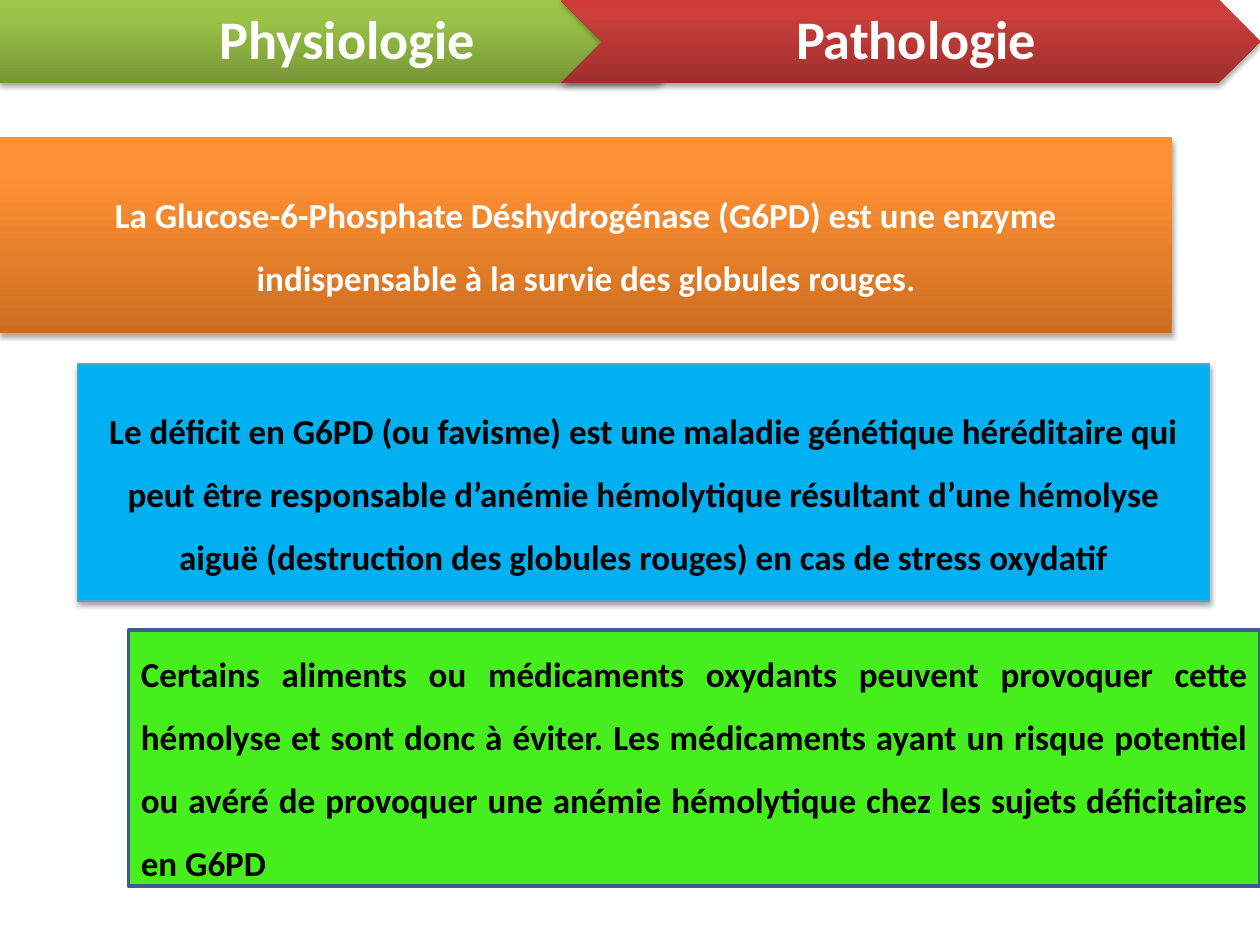
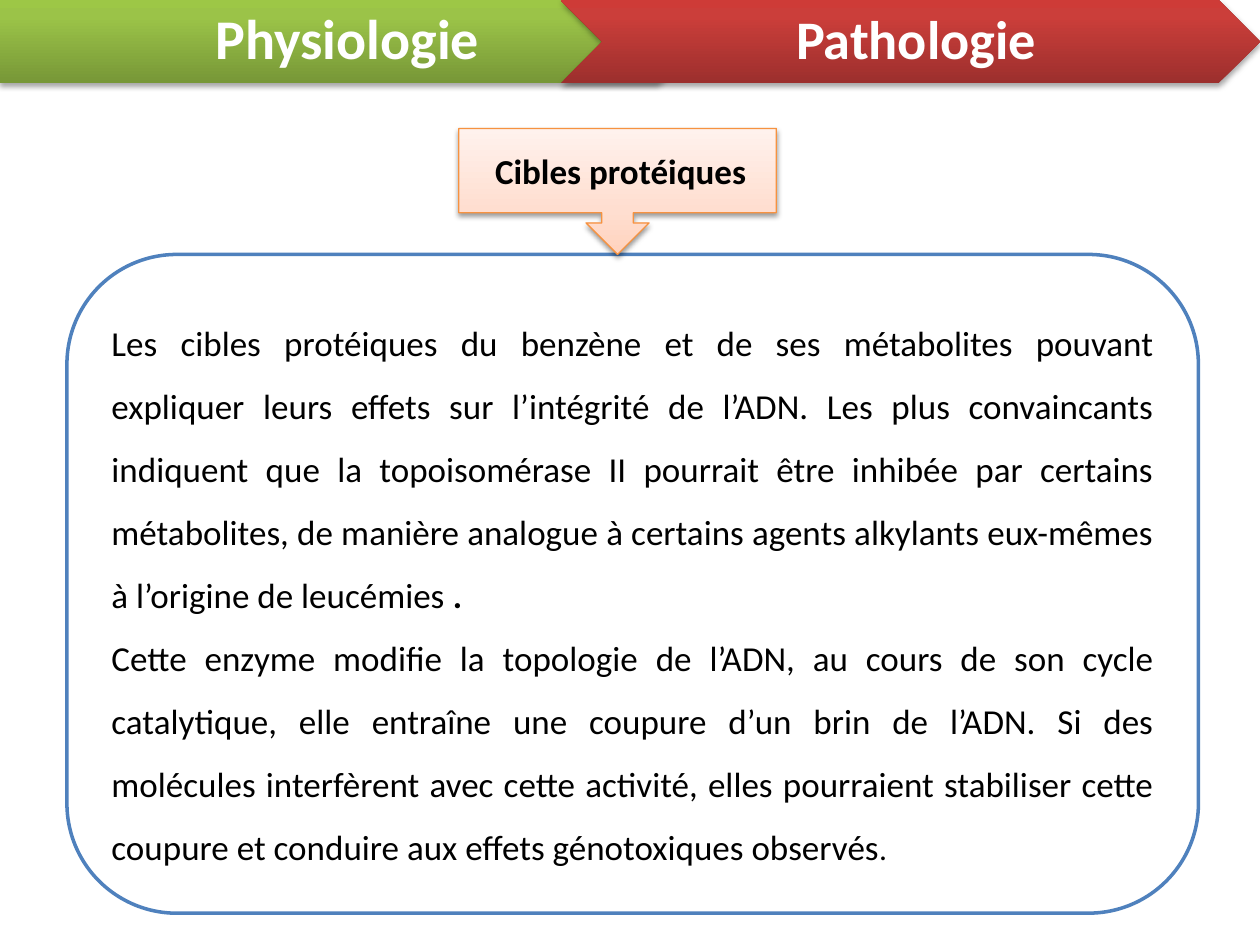
from dataclasses import dataclass

from lxml import etree
from pptx import Presentation
from pptx.dml.color import RGBColor
from pptx.enum.shapes import MSO_SHAPE
from pptx.enum.text import MSO_ANCHOR, PP_ALIGN
from pptx.oxml.ns import qn
from pptx.util import Cm, Pt

PENTAGON, CHEVRON = MSO_SHAPE.PENTAGON, MSO_SHAPE.CHEVRON
RECT, ROUNDED = MSO_SHAPE.RECTANGLE, MSO_SHAPE.ROUNDED_RECTANGLE
CALLOUT = MSO_SHAPE.DOWN_ARROW_CALLOUT
LEFT, CENTER, JUSTIFY = PP_ALIGN.LEFT, PP_ALIGN.CENTER, PP_ALIGN.JUSTIFY
MIDDLE = MSO_ANCHOR.MIDDLE

FONT = "Calibri"
BLACK = RGBColor(0x00, 0x00, 0x00)
WHITE = RGBColor(0xFF, 0xFF, 0xFF)
SKY = RGBColor(0x00, 0xB0, 0xF0)
TEAL = RGBColor(0x46, 0xAA, 0xC5)
LIME = RGBColor(0x46, 0xEE, 0x1E)
NAVY = RGBColor(0x3A, 0x5F, 0x8C)
BLUE = RGBColor(0x4F, 0x81, 0xBD)
ORANGE_LINE = RGBColor(0xF6, 0x92, 0x40)


@dataclass(frozen=True)
class Stop:
    percent: int
    color: RGBColor


@dataclass(frozen=True)
class Shadow:
    opacity: int
    distance: float


@dataclass(frozen=True)
class Run:
    text: str
    size: float = 20
    bold: bool = True


@dataclass(frozen=True)
class Box:
    kind: MSO_SHAPE
    left: float
    top: float
    width: float
    height: float
    fill: RGBColor | tuple[Stop, ...]
    paragraphs: tuple[tuple[Run, ...], ...]
    color: RGBColor = BLACK
    align: PP_ALIGN = CENTER
    spacing: float = 1.5
    insets: tuple[float, float, float, float] = (0.25, 0.13, 0.25, 0.13)
    line: RGBColor | None = None
    line_width: float = 0.75
    shadow: Shadow | None = None
    adjustments: tuple[float, ...] = ()


def ramp(middle: int, low: RGBColor, mid: RGBColor, high: RGBColor) -> tuple[Stop, ...]:
    return Stop(0, low), Stop(middle, mid), Stop(100, high)


GREEN_RAMP = ramp(80, RGBColor(0x77, 0x97, 0x37), RGBColor(0x9B, 0xC3, 0x48),
                  RGBColor(0x9D, 0xC7, 0x46))
RED_RAMP = ramp(80, RGBColor(0x9C, 0x2F, 0x2D), RGBColor(0xCB, 0x3E, 0x3A),
                RGBColor(0xCE, 0x3B, 0x37))
ORANGE_RAMP = ramp(80, RGBColor(0xCC, 0x6E, 0x20), RGBColor(0xFF, 0x90, 0x34),
                   RGBColor(0xFF, 0x91, 0x36))
PEACH_RAMP = ramp(35, RGBColor(0xFF, 0xD2, 0xBD), RGBColor(0xFF, 0xDE, 0xD0),
                  RGBColor(0xFF, 0xF2, 0xED))
STRONG_SHADOW = Shadow(35, 1.8)
SOFT_SHADOW = Shadow(38, 1.6)

SLIDE_W, SLIDE_H = 25.4, 19.05
BAND_W, BAND_H = 14.1, 1.68
PANEL_W = 22.81


def add_color(parent, color: RGBColor):
    return etree.SubElement(parent, qn("a:srgbClr"), val=str(color))


def set_fill(sp, fill: RGBColor | tuple[Stop, ...]) -> None:
    if isinstance(fill, RGBColor):
        sp.fill.solid()
        sp.fill.fore_color.rgb = fill
        return
    sp.fill.gradient()
    sp.fill.gradient_angle = 90
    stops = sp.element.spPr.find(qn("a:gradFill")).find(qn("a:gsLst"))
    for old in list(stops):
        stops.remove(old)
    for stop in fill:
        gs = etree.SubElement(stops, qn("a:gs"), pos=str(stop.percent * 1000))
        add_color(gs, stop.color)


def set_shadow(sp, shadow: Shadow | None) -> None:
    sp.shadow.inherit = False
    if shadow is None:
        return
    effects = sp.element.spPr.find(qn("a:effectLst"))
    outer = etree.SubElement(effects, qn("a:outerShdw"), blurRad=str(Pt(3.1)),
                             dist=str(Pt(shadow.distance)), dir="5400000",
                             rotWithShape="0")
    etree.SubElement(add_color(outer, BLACK), qn("a:alpha"),
                     val=str(shadow.opacity * 1000))


def write_text(tf, box: Box) -> None:
    tf.word_wrap = True
    tf.vertical_anchor = MIDDLE
    (tf.margin_left, tf.margin_top,
     tf.margin_right, tf.margin_bottom) = map(Cm, box.insets)
    for i, runs in enumerate(box.paragraphs):
        p = tf.add_paragraph() if i else tf.paragraphs[0]
        p.alignment = box.align
        p.line_spacing = box.spacing
        for run in runs:
            r = p.add_run()
            r.text = run.text
            r.font.name = FONT
            r.font.size = Pt(run.size)
            r.font.bold = run.bold
            r.font.color.rgb = box.color


def draw_box(s, box: Box) -> None:
    sp = s.shapes.add_shape(box.kind, Cm(box.left), Cm(box.top),
                            Cm(box.width), Cm(box.height))
    for i, value in enumerate(box.adjustments):
        sp.adjustments[i] = value
    set_fill(sp, box.fill)
    if box.line is None:
        sp.line.fill.background()
    else:
        sp.line.color.rgb = box.line
        sp.line.width = Pt(box.line_width)
    set_shadow(sp, box.shadow)
    write_text(sp.text_frame, box)


def band(kind: MSO_SHAPE, left: float, fill: tuple[Stop, ...], label: str,
         size: float, inset: float) -> Box:
    return Box(kind, left, 0, BAND_W, BAND_H, fill, ((Run(label, size),),),
               color=WHITE, spacing=0.9, insets=(inset, 0.23, 0.13, 0.23),
               shadow=STRONG_SHADOW)


def add_slide(prs, first_size: float, boxes: tuple[Box, ...]) -> None:
    s = prs.slides.add_slide(prs.slide_layouts[6])
    bands = (
        band(PENTAGON, 0, GREEN_RAMP, "Physiologie", first_size, 0.46),
        band(CHEVRON, SLIDE_W - BAND_W, RED_RAMP, "Pathologie", 31, 0.36),
    )
    for box in bands + boxes:
        draw_box(s, box)


DEFICIENCY = (
    Box(RECT, 0, 2.77, 23.62, 3.94, ORANGE_RAMP,
        ((Run("La Glucose-6-Phosphate Déshydrogénase (G6PD) est une enzyme "
              "indispensable à la survie des globules rouges"),
          Run(".", 18)),),
        color=WHITE, shadow=STRONG_SHADOW),
    Box(RECT, 1.57, 7.34, PANEL_W, 4.78, SKY,
        ((Run("Le déficit en G6PD (ou favisme) est une maladie génétique "
              "héréditaire qui peut être responsable d’anémie hémolytique "
              "résultant d’une hémolyse aiguë (destruction des globules "
              "rouges) en cas de stress oxydatif"),),),
        line=TEAL, shadow=SOFT_SHADOW),
    Box(RECT, SLIDE_W - PANEL_W, 12.7, PANEL_W, 5.16, LIME,
        ((Run("Certains aliments ou médicaments oxydants peuvent provoquer "
              "cette hémolyse et sont donc à éviter. Les médicaments ayant un "
              "risque potentiel ou avéré de provoquer une anémie hémolytique "
              "chez les sujets déficitaires en G6PD"),),),
        align=JUSTIFY, line=NAVY, line_width=2),
)

PROTEIN_TARGETS = (
    Box(ROUNDED, 1.35, 5.13, PANEL_W, 13.28, WHITE,
        ((Run("Les cibles protéiques du benzène et de ses métabolites pouvant "
              "expliquer leurs effets sur l’intégrité de l’ADN. Les plus "
              "convaincants indiquent que la topoisomérase II pourrait être "
              "inhibée par certains métabolites, de manière analogue à "
              "certains agents alkylants eux-mêmes à l’origine de leucémies ",
              bold=False),
          Run(".")),
         (Run("Cette enzyme modifie la topologie de l’ADN, au cours de son "
              "cycle catalytique, elle entraîne une coupure d’un brin de "
              "l’ADN. Si des molécules interfèrent avec cette activité, elles "
              "pourraient stabiliser cette coupure et conduire aux effets "
              "génotoxiques observés", bold=False),
          Run(".", 18, False))),
        align=JUSTIFY, line=BLUE, line_width=2),
    Box(CALLOUT, 9.25, 2.59, 6.4, 2.54, PEACH_RAMP,
        ((Run("Cibles protéiques"),),),
        align=LEFT, spacing=1.0, insets=(0.73, 0.13, 0.25, 0.13),
        line=ORANGE_LINE, shadow=SOFT_SHADOW,
        adjustments=(0.25, 0.25, 0.25, 0.67)),
)


def main() -> None:
    prs = Presentation()
    prs.slide_width, prs.slide_height = Cm(SLIDE_W), Cm(SLIDE_H)
    add_slide(prs, 31, DEFICIENCY)
    add_slide(prs, 32, PROTEIN_TARGETS)
    prs.save("out.pptx")


if __name__ == "__main__":
    main()
